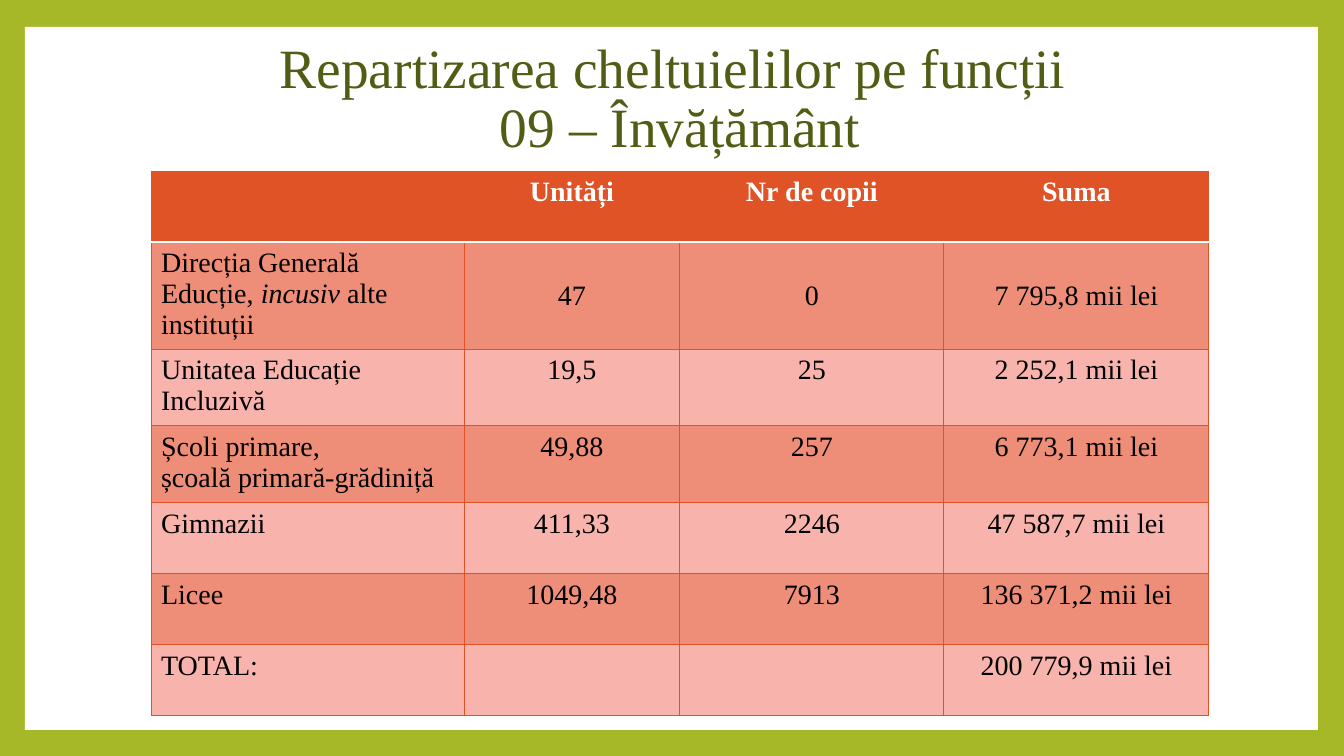
"""Build the slide on education spending by type of institution."""
from lxml import etree
from pptx import Presentation
from pptx import util as u
from pptx.dml.color import RGBColor
from pptx.enum import shapes, text
from pptx.oxml.ns import qn

EMU_PER_PX = 914400 / 100.8
FONT = "Times New Roman"
COLORS = {
    "frame": "A6B727", "panel": "FFFFFF", "title": "535C14",
    "header": "DF5327", "band": "EE8D78", "light": "F7B3AC",
    "header_text": "FFFFFF", "body_text": "000000",
    "grid": "DF5327", "header_rule": "FFFFFF",
}
TITLE = "Repartizarea cheltuielilor pe funcții \v09 – Învățământ"
COLUMN_WIDTHS = [313, 216, 264, 265]
ROW_HEIGHTS = [71, 107, 77, 77, 71, 71, 71]
EXPENSES = [
    ["", "Unități", "Nr de copii", "Suma"],
    ["Direcția Generală Educție, *incusiv* alte instituții", "47", "0", "7 795,8 mii lei"],
    ["Unitatea Educație Incluzivă", "19,5", "25", "2 252,1 mii lei"],
    ["Școli primare,\nșcoală primară-grădiniță", "49,88", "257", "6 773,1 mii lei"],
    ["Gimnazii", "411,33", "2246", "47 587,7 mii lei"],
    ["Licee", "1049,48", "7913", "136 371,2 mii lei"],
    ["TOTAL:", "", "", "200 779,9 mii lei"],
]


def px(length):
    """Turn px into EMU."""
    return u.Emu(round(length * EMU_PER_PX))


def rgb(role):
    """Return the colour of a role."""
    return RGBColor.from_string(COLORS[role])


def paint(fill, role):
    """Make a fill solid in the colour of a role."""
    fill.solid()
    fill.fore_color.rgb = rgb(role)


def format_run(run, role, **values):
    """Apply font, colour and further format values to a run."""
    for name, value in {"name": FONT, **values}.items():
        setattr(run.font, name, value)
    run.font.color.rgb = rgb(role)


def add_panel(slide):
    """Draw the white panel inside the green frame."""
    panel = slide.shapes.add_shape(
        shapes.MSO_SHAPE.RECTANGLE, px(25), px(27), px(1293), px(703))
    panel.shadow.inherit = False
    paint(panel.fill, "panel")
    panel.line.fill.background()


def fill_title(slide):
    """Place and format the two-line title."""
    title = slide.shapes.title
    place = {"left": 151, "top": 39, "width": 1058, "height": 122}
    for name, value in place.items():
        setattr(title, name, px(value))
    frame = title.text_frame
    frame.text = TITLE
    layout = {"word_wrap": True, "auto_size": text.MSO_AUTO_SIZE.NONE,
              "vertical_anchor": text.MSO_ANCHOR.MIDDLE,
              "margin_top": 0, "margin_bottom": 0}
    for name, value in layout.items():
        setattr(frame, name, value)
    heading = frame.paragraphs[0]
    heading.alignment = text.PP_ALIGN.CENTER
    heading.line_spacing = 0.9
    for run in heading.runs:
        format_run(run, "title", size=u.Pt(39.6))
    for line_break in heading._p.findall(qn("a:br")):
        etree.SubElement(line_break, qn("a:rPr"), sz="3960")


def add_border(cell, side, role, points):
    """Draw one border of a cell; side is L, R, T or B."""
    border = etree.SubElement(
        cell._tc.get_or_add_tcPr(), qn(f"a:ln{side}"), w=str(u.Pt(points)))
    solid = etree.SubElement(border, qn("a:solidFill"))
    etree.SubElement(solid, qn("a:srgbClr"), val=COLORS[role])


def write_cell(cell, content, align, role, bold):
    """Write a cell; a part between asterisks is italic."""
    for number, line in enumerate(content.split("\n")):
        frame = cell.text_frame
        paragraph = frame.add_paragraph() if number else frame.paragraphs[0]
        paragraph.alignment = align
        for index, part in enumerate(line.split("*")):
            if part:
                run = paragraph.add_run()
                run.text = part
                format_run(run, role, size=u.Pt(20), bold=bold, italic=index % 2 == 1)


def format_cell(cell, row, column, content):
    """Give a cell its borders, fill and text by its place in the table."""
    header = row == 0
    rules = {"L": False, "R": False, "T": row == 1, "B": header}
    for side, white in rules.items():
        add_border(cell, side, *(("header_rule", 1.5) if white else ("grid", 0.79)))
    paint(cell.fill, "header" if header else "band" if row % 2 else "light")
    align = text.PP_ALIGN.CENTER if column else text.PP_ALIGN.LEFT
    if row == 1 and column:
        cell.vertical_anchor = text.MSO_ANCHOR.MIDDLE
    write_cell(cell, content, align, "header_text" if header else "body_text", header)


def add_expense_table(slide):
    """Build the table of units, children and sums."""
    table = slide.shapes.add_table(
        len(ROW_HEIGHTS), len(COLUMN_WIDTHS), px(151), px(171),
        px(sum(COLUMN_WIDTHS)), px(sum(ROW_HEIGHTS))).table
    for column, width in zip(table.columns, COLUMN_WIDTHS):
        column.width = px(width)
    for row, height in zip(table.rows, ROW_HEIGHTS):
        row.height = px(height)
    for row, contents in enumerate(EXPENSES):
        for column, content in enumerate(contents):
            format_cell(table.cell(row, column), row, column, content)


def main():
    """Build and save the slide."""
    deck = Presentation()
    deck.slide_width, deck.slide_height = px(1344), px(756)
    slide = deck.slides.add_slide(deck.slide_layouts[5])
    paint(slide.background.fill, "frame")
    add_panel(slide)
    fill_title(slide)
    slide.shapes._spTree.append(slide.shapes.title._element)
    add_expense_table(slide)
    deck.save("out.pptx")


if __name__ == "__main__":
    main()
